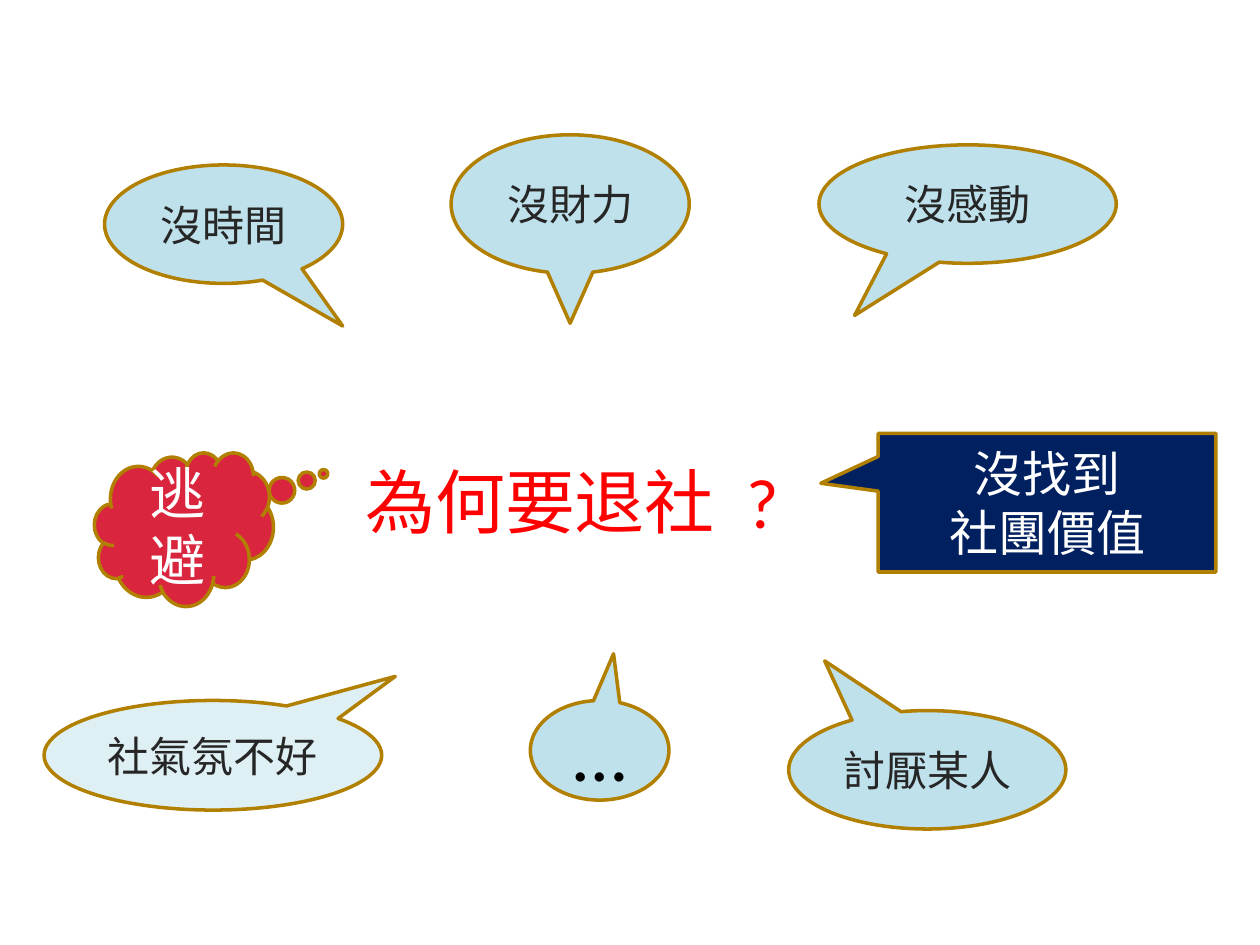
import pptx
import pptx.util
from pptx.dml.color import RGBColor
from pptx.enum.shapes import MSO_SHAPE
from pptx.enum.text import MSO_ANCHOR, MSO_AUTO_SIZE, PP_ALIGN

SKY = RGBColor(0xBF, 0xE1, 0xEB)
PALE_SKY = RGBColor(0xDF, 0xF0, 0xF5)
CRIMSON = RGBColor(0xD9, 0x25, 0x3E)
NAVY = RGBColor(0x00, 0x20, 0x60)
GOLD = RGBColor(0xB2, 0x80, 0x00)
RED = RGBColor(0xFF, 0x00, 0x00)
CHARCOAL = RGBColor(0x26, 0x26, 0x26)
BLACK = RGBColor(0x00, 0x00, 0x00)
WHITE = RGBColor(0xFF, 0xFF, 0xFF)

deck = pptx.Presentation()
deck.slide_width = pptx.util.Inches(10)
deck.slide_height = pptx.util.Inches(7.5)
slide = deck.slides.add_slide(deck.slide_layouts[6])
COLUMN = deck.slide_width / 100
ROW = deck.slide_height / 75


def cells(left, top, width, height):
    return [round(n * size) for n, size in
            zip((left, top, width, height), (COLUMN, ROW, COLUMN, ROW))]


def style(paragraph, size, color):
    paragraph.font.name = "Calibri"
    paragraph.font.size = pptx.util.Pt(size)
    paragraph.font.color.rgb = color


question = slide.shapes.add_textbox(*cells(28, 35.9, 34.6, 7.7)).text_frame
question.word_wrap = False
question.auto_size = MSO_AUTO_SIZE.SHAPE_TO_FIT_TEXT
wording = question.paragraphs[0]
style(wording, 40, RED)
for part in ("為何要退社", " ", "?"):
    run = wording.add_run()
    run.text = part
    if part == " ":
        run._r.get_or_add_rPr().set("spc", "900")

OVAL = MSO_SHAPE.OVAL_CALLOUT
reasons = [
    ("沒時間", OVAL, (8.3, 13.1, 18.9, 9.4), (0.5, 0.86), SKY, 24, CHARCOAL),
    ("沒財力", OVAL, (35.8, 10.7, 18.9, 11), (0, 0.86), SKY, 24, CHARCOAL),
    ("社氣氛不好", OVAL, (3.5, 55.6, 26.8, 8.7), (0.54, -0.72), PALE_SKY, 24, CHARCOAL),
    ("沒感動", OVAL, (65, 11.5, 23.6, 9.4), (-0.38, 0.94), SKY, 24, CHARCOAL),
    ("討厭某人", OVAL, (62.6, 56.4, 22, 9.4), (-0.37, -0.92), SKY, 24, CHARCOAL),
    ("…", OVAL, (42.1, 55.6, 11, 7.9), (0.1, -0.97), SKY, 44, BLACK),
    ("逃避", MSO_SHAPE.CLOUD_CALLOUT, (7.5, 35.9, 14.2, 12.2), (0.78, -0.36), CRIMSON, 32, WHITE),
    ("沒找到\n社團價值", MSO_SHAPE.RECTANGULAR_CALLOUT, (69.7, 34.4, 26.8, 11), (-0.67, -0.14), NAVY, 28, WHITE),
]
for reason, outline, place, pointer, fill, size, ink in reasons:
    bubble = slide.shapes.add_shape(outline, *cells(*place))
    bubble.shadow.inherit = False
    bubble.adjustments[0], bubble.adjustments[1] = pointer
    bubble.fill.solid()
    bubble.fill.fore_color.rgb = fill
    bubble.line.color.rgb = GOLD
    bubble.line.width = pptx.util.Pt(2)
    bubble.text_frame.word_wrap = True
    bubble.text_frame.vertical_anchor = MSO_ANCHOR.MIDDLE
    bubble.text_frame.text = reason
    for paragraph in bubble.text_frame.paragraphs:
        paragraph.alignment = PP_ALIGN.CENTER
        style(paragraph, size, ink)

deck.save("out.pptx")
